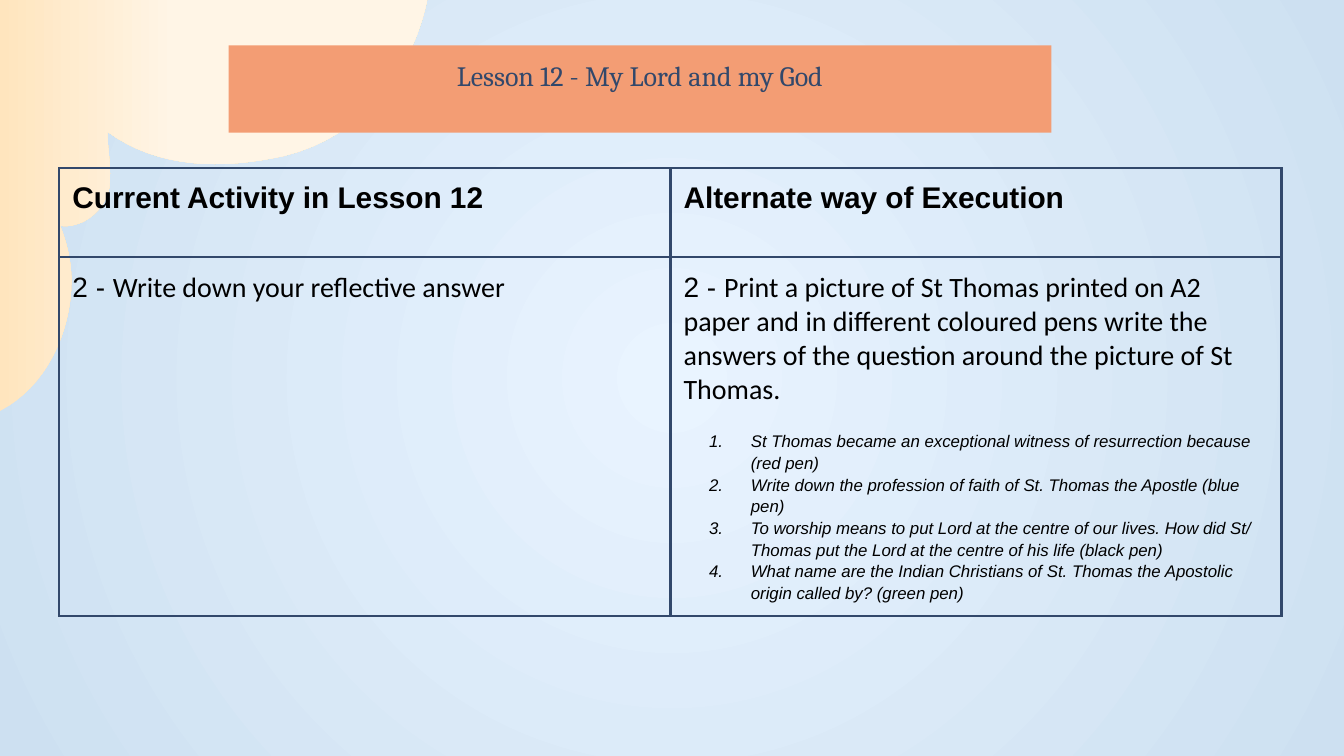
from pptx import Presentation
from pptx.dml.color import RGBColor
from pptx.enum.shapes import MSO_SHAPE as Shape
from pptx.enum.text import MSO_ANCHOR as Anchor, PP_ALIGN as Align
from pptx.oxml import parse_xml
from pptx.oxml.ns import nsdecls, qn
from pptx.util import Cm, Pt

COLORS = {
    "navy": "32486B",
    "orange": "F39D74",
    "black": "000000",
    "sky": "E9F4FF",
    "haze": "CDE0F1",
    "cream": "FFF5E6",
    "peach": "FFE5BE",
}
INSET = Cm(0.25)


def add_text(paragraph, text, font="Arial", size=15, color="black", bold=False, italic=False):
    run = paragraph.add_run()
    run.text = text
    run.font.name = font
    run.font.size = Pt(size)
    run.font.bold = bold
    run.font.italic = italic
    run.font.color.rgb = RGBColor.from_string(COLORS[color])


def set_gradient(fill, owner, stops, direction):
    fill.gradient()
    gradient = owner.find(".//" + qn("a:gradFill"))
    stop_xml = "".join(
        f'<a:gs pos="{position * 1000}"><a:srgbClr val="{COLORS[color]}"/></a:gs>'
        for position, color in stops
    )
    gradient.getparent().replace(gradient, parse_xml(
        f'<a:gradFill {nsdecls("a")} rotWithShape="1">'
        f"<a:gsLst>{stop_xml}</a:gsLst>{direction}</a:gradFill>"
    ))


presentation = Presentation()
presentation.slide_width, presentation.slide_height = Cm(25.4), Cm(14.29)
slide = presentation.slides.add_slide(presentation.slide_layouts[6])

# Background
set_gradient(
    slide.background.fill, slide.element, [(0, "sky"), (100, "haze")],
    '<a:path path="circle"><a:fillToRect l="50000" t="50000" r="50000" b="50000"/></a:path>',
)

# Corner blob: cubic curves sampled into short segments, in centimetres
curves = [
    ((0.86, 7.32), (1.35, 6.3), (1.35, 5.31)),
    ((1.35, 4.95), (1.27, 4.6), (1.14, 4.27)),
    ((1.52, 4.32), (1.91, 4.04), (2.03, 3.68)),
    ((2.08, 3.56), (2.08, 3.43), (2.08, 3.28)),
    ((2.08, 3.02), (2.03, 2.74), (2.03, 2.49)),
    ((3, 3.2), (4.22, 3.2), (5.36, 2.95)),
    ((6.88, 2.59), (7.85, 1.3), (8.1, -0.13)),
]
STEPS = 16
outline = [(8.1, -0.13), (0, -0.13), (0, 7.77)]
for control_1, control_2, end in curves:
    start = outline[-1]
    for step in range(1, STEPS + 1):
        t = step / STEPS
        outline.append(tuple(
            (1 - t) ** 3 * a + 3 * (1 - t) ** 2 * t * b + 3 * (1 - t) * t**2 * c + t**3 * d
            for a, b, c, d in zip(start, control_1, control_2, end)
        ))
points = [(Cm(x), Cm(y)) for x, y in outline]
builder = slide.shapes.build_freeform(*points[0])
builder.add_line_segments(points[1:], close=True)
blob = builder.convert_to_shape()
blob.shadow.inherit = False
blob.line.fill.background()
set_gradient(
    blob.fill, blob.element, [(0, "peach"), (41, "cream"), (100, "cream")],
    '<a:lin ang="0" scaled="0"/>',
)

# Title bar
title = slide.shapes.add_shape(Shape.RECTANGLE, Cm(4.32), Cm(0.86), Cm(15.55), Cm(1.65))
title.shadow.inherit = False
title.fill.solid()
title.fill.fore_color.rgb = RGBColor.from_string(COLORS["orange"])
title.line.fill.background()
frame = title.text_frame
frame.word_wrap = True
frame.vertical_anchor = Anchor.TOP
frame.margin_left = frame.margin_right = frame.margin_top = frame.margin_bottom = INSET
frame.paragraphs[0].alignment = Align.CENTER
add_text(frame.paragraphs[0], "Lesson 12 - My Lord and my God", font="Cambria", color="navy")

# Activity table
table = slide.shapes.add_table(2, 2, Cm(1.12), Cm(3.18), Cm(23.1), Cm(8)).table
table.first_row = table.horz_banding = False
for column in table.columns:
    column.width = Cm(11.55)
for row, height in zip(table.rows, (1.68, 6.32)):
    row.height = Cm(height)
for cell in table.iter_cells():
    cell.margin_left = cell.margin_right = cell.margin_top = cell.margin_bottom = INSET
    cell.fill.background()
    properties = cell._tc.get_or_add_tcPr()
    for index, side in enumerate(("lnL", "lnR", "lnT", "lnB")):
        properties.insert(index, parse_xml(
            f'<a:{side} {nsdecls("a")} w="{Pt(1.5)}"><a:solidFill>'
            f'<a:srgbClr val="{COLORS["navy"]}"/></a:solidFill></a:{side}>'
        ))

# Headings and activities
columns = [
    ("Current Activity in Lesson 12", "Write down your reflective answer"),
    ("Alternate way of Execution",
     "Print a picture of St Thomas printed on A2 paper and in different coloured pens "
     "write the answers of the question around the picture of St Thomas."),
]
for index, (heading, activity) in enumerate(columns):
    add_text(table.cell(0, index).text_frame.paragraphs[0], heading, size=16, bold=True)
    paragraph = table.cell(1, index).text_frame.paragraphs[0]
    add_text(paragraph, "2 - ")
    add_text(paragraph, activity, font="Calibri")

# Numbered questions
questions = [
    "St Thomas became an exceptional witness of resurrection because (red pen)",
    "Write down the profession of faith of St. Thomas the Apostle (blue pen)",
    "To worship means to put Lord at the centre of our lives. How did St/ Thomas put "
    "the Lord at the centre of his life (black pen)",
    "What name are the Indian Christians of St. Thomas the Apostolic origin called by? "
    "(green pen)",
]
for index, question in enumerate(questions):
    paragraph = table.cell(1, 1).text_frame.add_paragraph()
    paragraph.line_spacing = 1.15
    paragraph.space_before = Pt(0 if index else 12)
    properties = paragraph._p.get_or_add_pPr()
    properties.set("marL", str(Cm(1.27)))
    properties.set("indent", str(Cm(-0.79)))
    for bullet in (
        f'<a:buClr {nsdecls("a")}><a:srgbClr val="{COLORS["black"]}"/></a:buClr>',
        f'<a:buFont {nsdecls("a")} typeface="Arial"/>',
        f'<a:buAutoNum {nsdecls("a")} type="arabicPeriod"/>',
    ):
        properties.append(parse_xml(bullet))
    add_text(paragraph, question, size=9, italic=True)

presentation.save("out.pptx")
